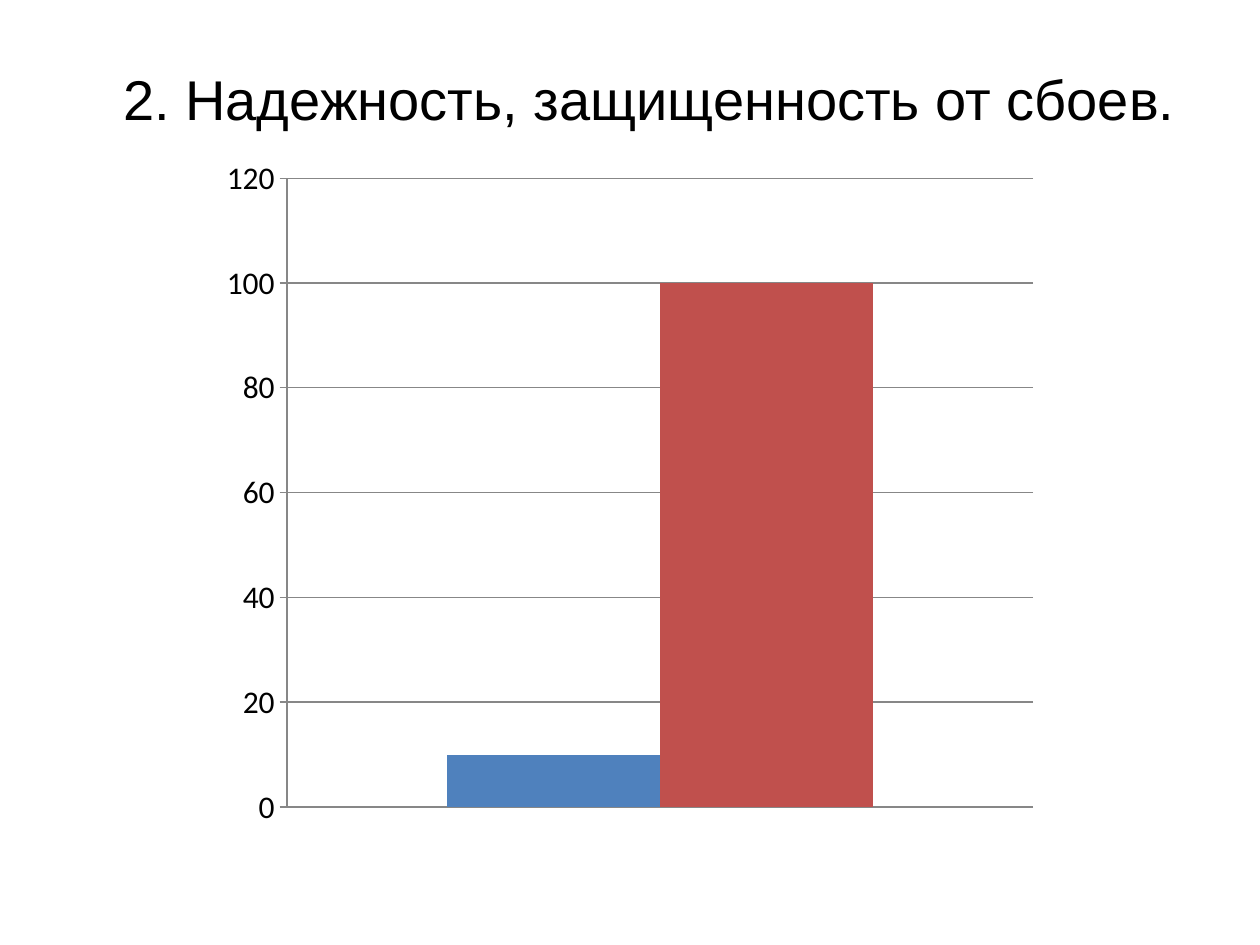
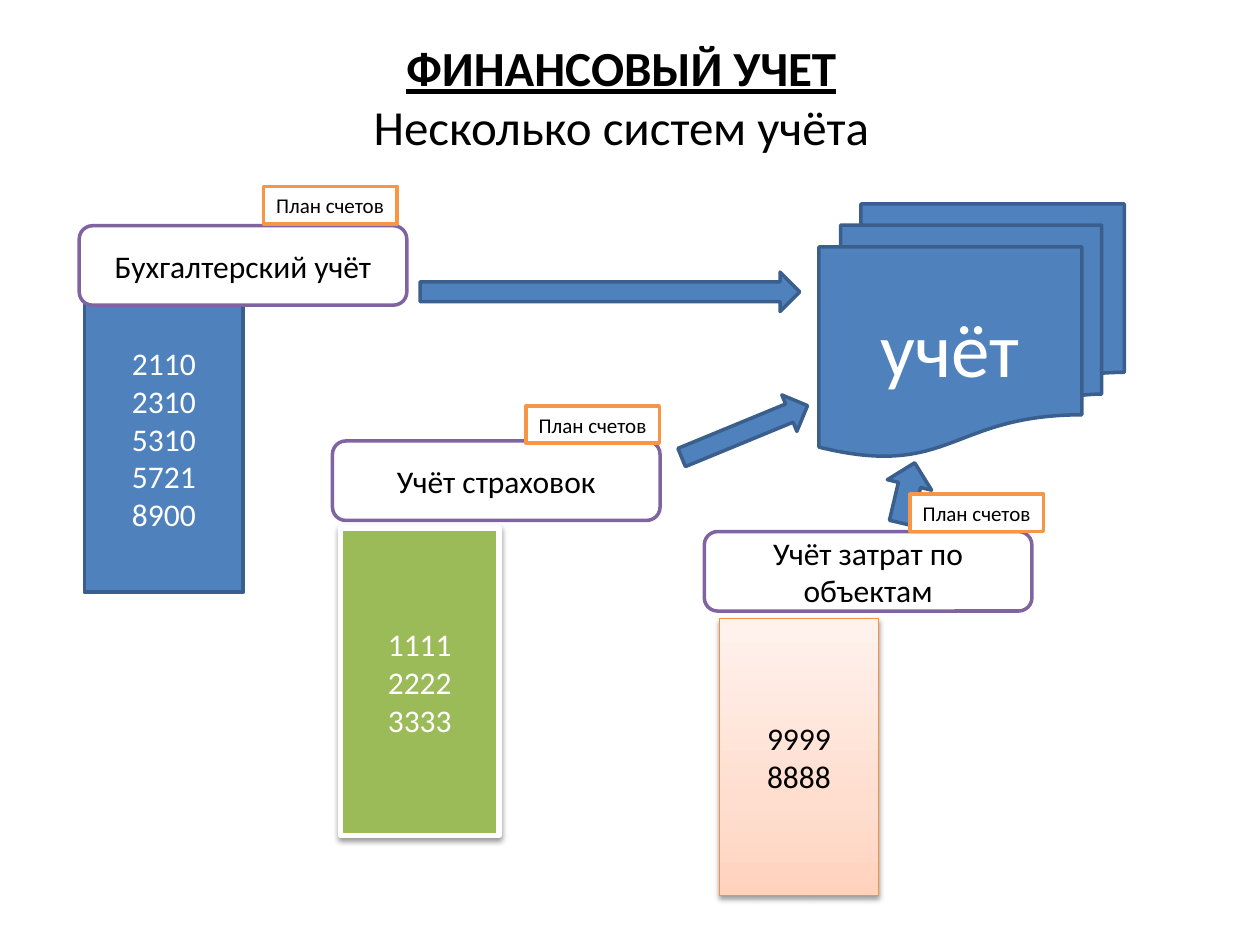
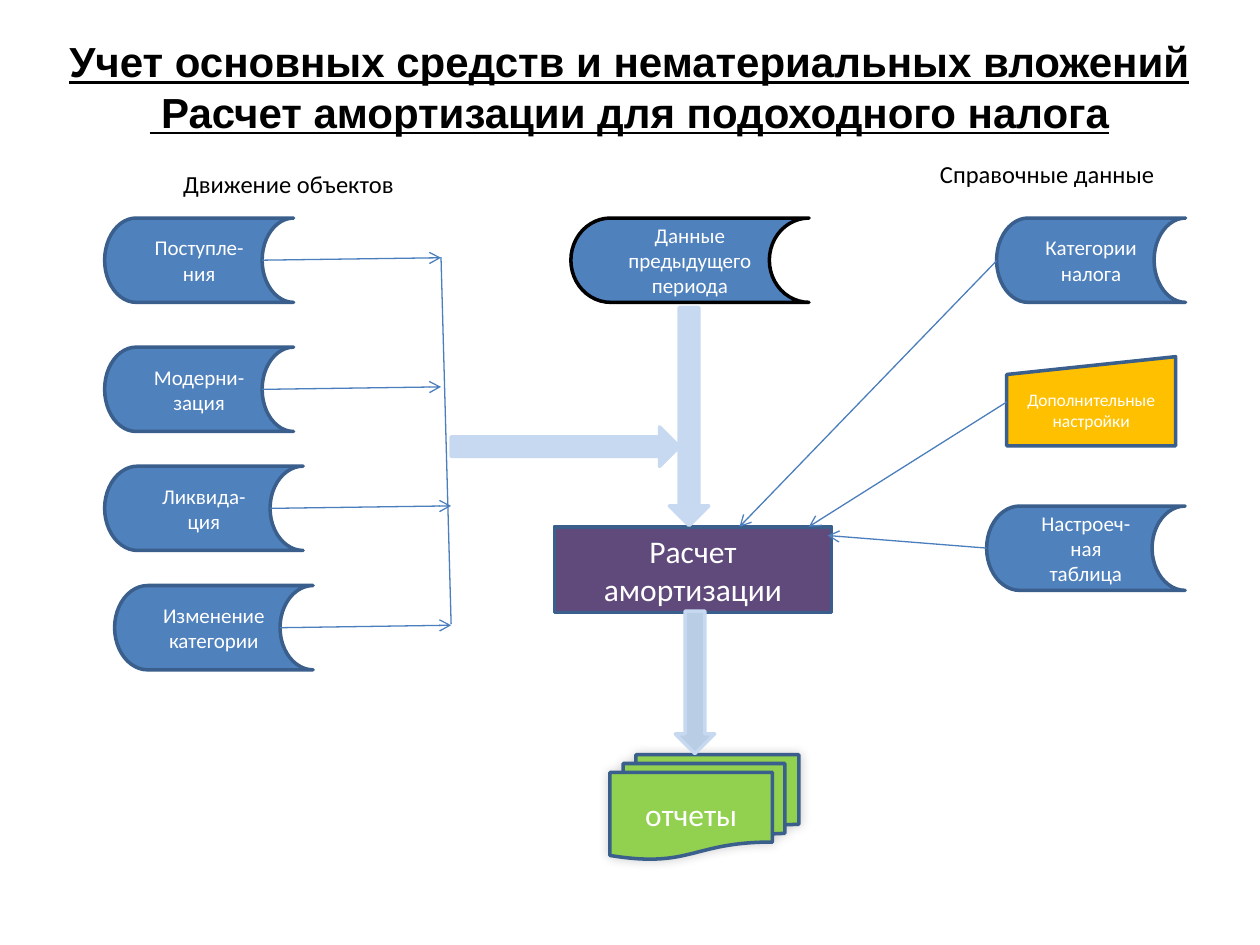
"""Build three slides on accounting systems: a chart and two flow diagrams."""
from copy import deepcopy

from lxml.etree import SubElement
from pptx import Presentation
from pptx.chart.data import CategoryChartData
from pptx.dml.color import RGBColor
from pptx.enum.chart import XL_CHART_TYPE, XL_TICK_MARK
from pptx.enum.shapes import MSO_CONNECTOR, MSO_SHAPE
from pptx.enum.text import MSO_ANCHOR, PP_ALIGN
from pptx.oxml.ns import qn
from pptx.util import Pt

BLACK = RGBColor(0x00, 0x00, 0x00)
WHITE = RGBColor(0xFF, 0xFF, 0xFF)
BLUE = RGBColor(0x4F, 0x81, 0xBD)
DARK_BLUE = RGBColor(0x3A, 0x5F, 0x8C)
LINE_BLUE = RGBColor(0x4B, 0x7E, 0xBC)
PALE_BLUE = RGBColor(0xC6, 0xD9, 0xF1)
SOFT_BLUE = RGBColor(0xB9, 0xCD, 0xE5)
RED = RGBColor(0xC0, 0x50, 0x4D)
PURPLE = RGBColor(0x80, 0x64, 0xA2)
DARK_PURPLE = RGBColor(0x60, 0x4A, 0x7B)
OLIVE = RGBColor(0x9B, 0xBB, 0x59)
GREEN = RGBColor(0x92, 0xD0, 0x50)
GOLD = RGBColor(0xFF, 0xC0, 0x00)
ORANGE = RGBColor(0xF7, 0x96, 0x46)
DEEP_ORANGE = RGBColor(0xF6, 0x92, 0x40)
GRAY = RGBColor(0x87, 0x87, 0x87)
PEACH_STOPS = (
    (0, RGBColor(0xFF, 0xD2, 0xBD)),
    (0.35, RGBColor(0xFF, 0xDE, 0xD0)),
    (1, RGBColor(0xFF, 0xF2, 0xED)),
)
SOFT_SHADOW = (38, 3.1, 1.6, 90)
GLOW_SHADOW = (20, 6, 0, 225)
STORE_HEIGHT = 48.2


def add_span(para, text, size=18, color=WHITE, font="Calibri", bold=False, underline=False):
    """Add a formatted run to a paragraph."""
    span = para.add_run()
    span.text = text
    span.font.name = font
    span.font.size = Pt(size)
    span.font.color.rgb = color
    span.font.bold = bold
    span.font.underline = underline


def add_lines(box, lines, **text_format):
    """Write centred lines, one paragraph each, in the middle of a box."""
    frame = box.text_frame
    frame.word_wrap = True
    frame.vertical_anchor = MSO_ANCHOR.MIDDLE
    for number, line in enumerate(lines):
        para = frame.add_paragraph() if number else frame.paragraphs[0]
        para.alignment = PP_ALIGN.CENTER
        add_span(para, line, **text_format)


def add_title(page, place, lines, align=PP_ALIGN.CENTER):
    """Add a title whose lines are (text, format) pairs in one paragraph."""
    box = page.shapes.add_textbox(*map(Pt, place))
    frame = box.text_frame
    frame.word_wrap = True
    frame.vertical_anchor = MSO_ANCHOR.MIDDLE
    para = frame.paragraphs[0]
    para.alignment = align
    for number, (text, text_format) in enumerate(lines):
        if number:
            para.add_line_break()
        add_span(para, text, color=BLACK, **text_format)


def add_shadow(shape, alpha, blur, distance, angle):
    """Give a shape a black outer shadow."""
    effects = shape._element.spPr.find(qn("a:effectLst"))
    shadow = SubElement(effects, qn("a:outerShdw"), blurRad=str(Pt(blur)),
                        dist=str(Pt(distance)), dir=str(angle * 60000), rotWithShape="0")
    color = SubElement(shadow, qn("a:srgbClr"), val=str(BLACK))
    SubElement(color, qn("a:alpha"), val=str(alpha * 1000))


def fill_gradient(shape, stops):
    """Fill a shape with three colour stops running upward."""
    shape.fill.gradient()
    shape.fill.gradient_angle = 90
    stop_list = shape._element.spPr.find(".//" + qn("a:gsLst"))
    stop_list.insert(1, deepcopy(stop_list[0]))
    for stop, (position, color) in zip(shape.fill.gradient_stops, stops):
        stop.position = position
        stop.color.rgb = color


def add_box(page, kind, place, lines=(), fill=BLUE, line=DARK_BLUE, weight=2,
            rotation=0, shadow=None, **text_format):
    """Add a preset shape with its fill, outline and text."""
    shape = page.shapes.add_shape(kind, *map(Pt, place))
    shape.rotation = rotation
    shape.shadow.inherit = False
    if fill is PEACH_STOPS:
        fill_gradient(shape, fill)
    else:
        shape.fill.solid()
        shape.fill.fore_color.rgb = fill
    shape.line.color.rgb = line
    shape.line.width = Pt(weight)
    if shadow:
        add_shadow(shape, *shadow)
    add_lines(shape, lines, **text_format)


def add_line(page, start, end, arrow=True):
    """Draw a thin straight line, with an open arrowhead at its end if asked."""
    line = page.shapes.add_connector(MSO_CONNECTOR.STRAIGHT, *map(Pt, start + end))
    line.line.color.rgb = LINE_BLUE
    line.line.width = Pt(0.75)
    if arrow:
        SubElement(line.line._get_or_add_ln(), qn("a:tailEnd"), type="arrow")
    SubElement(line._element.spPr, qn("a:effectLst"))


def add_store(page, left, top, width, text, line=DARK_BLUE):
    """Add a stored-data symbol."""
    add_box(page, MSO_SHAPE.FLOWCHART_STORED_DATA, (left, top, width, STORE_HEIGHT),
            [text], line=line, size=12)


def add_reliability_chart(page):
    """Add the column chart comparing two values."""
    data = CategoryChartData()
    data.categories = ["1"]
    data.add_series("Series 1", [10])
    data.add_series("Series 2", [100])
    chart = page.shapes.add_chart(XL_CHART_TYPE.COLUMN_CLUSTERED,
                                  Pt(120), Pt(83), Pt(480), Pt(397), data).chart
    chart.has_legend = False
    chart.has_title = False
    chart.font.name = "Calibri"
    chart.font.size = Pt(18)
    chart.font.color.rgb = BLACK
    chart.category_axis.visible = False
    axis = chart.value_axis
    axis.minimum_scale, axis.maximum_scale, axis.major_unit = 0, 120, 20
    axis.major_tick_mark = XL_TICK_MARK.CROSS
    axis.format.line.color.rgb = GRAY
    axis.major_gridlines.format.line.color.rgb = GRAY
    plot = chart.plots[0]
    plot.gap_width = 150
    plot.overlap = 0
    plot.vary_by_categories = False
    for series, color in zip(plot.series, (BLUE, RED)):
        series.format.fill.solid()
        series.format.fill.fore_color.rgb = color


def build_reliability(page):
    """Build the reliability slide."""
    add_title(page, (63.2, 34, 630, 44),
              [("2. Надежность, защищенность от сбоев.", {"size": 32, "font": "Arial"})],
              align=PP_ALIGN.LEFT)
    add_reliability_chart(page)


def build_accounting(page):
    """Build the slide with several accounting systems feeding one."""
    add_title(page, (31, 21.6, 648, 67), [
        ("ФИНАНСОВЫЙ УЧЕТ", {"size": 28, "bold": True, "underline": True}),
        ("Несколько систем учёта", {"size": 28}),
    ])
    add_box(page, MSO_SHAPE.FLOWCHART_MULTIDOCUMENT, (468, 116.5, 174.5, 144.5),
            ["учёт"], size=44)
    systems = (
        ("Бухгалтерский учёт", (45.3, 129), (48.3, 162.8, 90.7, 175.7),
         ["2110", "2310", "5310", "5721", "8900"], {}),
        ("Учёт страховок", (190, 252), (194.5, 301.7, 90.7, 175.7),
         ["1111", "2222", "3333"],
         {"fill": OLIVE, "line": WHITE, "weight": 3, "shadow": SOFT_SHADOW}),
        ("Учёт затрат по объектам", (402.5, 303.8), (411.2, 353.5, 90.7, 158.4),
         ["9999", "8888"],
         {"fill": PEACH_STOPS, "line": DEEP_ORANGE, "weight": 0.75,
          "shadow": SOFT_SHADOW, "color": BLACK}),
    )
    for name, corner, column, accounts, style in systems:
        add_box(page, MSO_SHAPE.RECTANGLE, column, accounts, **style)
        add_box(page, MSO_SHAPE.ROUNDED_RECTANGLE, (*corner, 187.2, 45.4), [name],
                fill=WHITE, line=PURPLE, color=BLACK)
    for place, rotation in (((240, 155.5, 217, 22.5), 0),
                            ((386.6, 235.4, 77.8, 22.5), 337.6),
                            ((501, 268.6, 35.3, 26), 283.3)):
        add_box(page, MSO_SHAPE.RIGHT_ARROW, place, rotation=rotation)
    for corner in ((150.5, 106.6), (300.5, 232), (520, 282.4)):
        add_box(page, MSO_SHAPE.RECTANGLE, (*corner, 76.3, 21.3), ["План счетов"],
                fill=WHITE, line=ORANGE, size=12, color=BLACK)


def build_depreciation(page):
    """Build the slide with the depreciation flow."""
    heading = {"size": 24, "font": "Arial", "bold": True, "underline": True}
    add_title(page, (25.2, 21.6, 669, 55.4), [
        ("Учет основных средств и нематериальных вложений", heading),
        (" Расчет амортизации для подоходного налога", heading),
    ])
    add_store(page, 326.2, 124.6, 136.1, "Данные предыдущего периода", line=BLACK)
    add_box(page, MSO_SHAPE.FLOWCHART_PROCESS, (316.8, 301, 158.4, 49),
            ["Расчет амортизации"], fill=DARK_PURPLE)
    add_box(page, MSO_SHAPE.FLOWCHART_MULTIDOCUMENT, (348.5, 431.3, 108, 59.8),
            ["отчеты"], fill=GREEN, shadow=GLOW_SHADOW)

    movements = (
        ("Поступле-ния", 59.8, 124.6, 108, 252),
        ("Модерни-зация", 59.8, 198.4, 108, 252),
        ("Ликвида-ция", 59.8, 266.4, 113.4, 257.8),
        ("Изменение категории", 65.5, 334.6, 113.4, 257.8),
    )
    for text, left, top, width, arrow_end in movements:
        add_store(page, left, top, width, text)
        middle = top + STORE_HEIGHT / 2
        add_line(page, (left + width * 5 / 6, middle), (arrow_end, middle - 1.4))
    add_line(page, (252, 147), (257.8, 356.6), arrow=False)

    add_store(page, 569.5, 124.6, 108, "Категории налога")
    add_store(page, 563.8, 289.2, 113.4, "Настроеч-ная таблица")
    add_box(page, MSO_SHAPE.FLOWCHART_MANUAL_INPUT, (575.3, 203.8, 96.5, 51),
            ["Дополнительные настройки"], fill=GOLD, size=10)
    for start, end in (((569.5, 149), (422.6, 301)),
                       ((575.3, 229.7), (462.2, 301)),
                       ((563.8, 313.2), (473, 306))):
        add_line(page, start, end)

    for kind, place, fill in (
            (MSO_SHAPE.DOWN_ARROW, (385.9, 349.2, 22.5, 81.4), SOFT_BLUE),
            (MSO_SHAPE.DOWN_ARROW, (382.5, 175.7, 22.5, 124.6), PALE_BLUE),
            (MSO_SHAPE.RIGHT_ARROW, (257.8, 244, 130.3, 22.5), PALE_BLUE)):
        add_box(page, kind, place, fill=fill, line=PALE_BLUE)
    for text, place in (("Движение объектов", (65.5, 90.7, 198.7, 28)),
                        ("Справочные данные", (513.4, 90.7, 170, 17.3))):
        add_box(page, MSO_SHAPE.RECTANGLE, place, [text], fill=WHITE, line=WHITE,
                size=14, color=BLACK)


def main():
    """Build and save the deck."""
    deck = Presentation()
    deck.slide_width, deck.slide_height = Pt(720), Pt(540)
    for build in (build_reliability, build_accounting, build_depreciation):
        build(deck.slides.add_slide(deck.slide_layouts[6]))
    deck.save("out.pptx")


if __name__ == "__main__":
    main()
